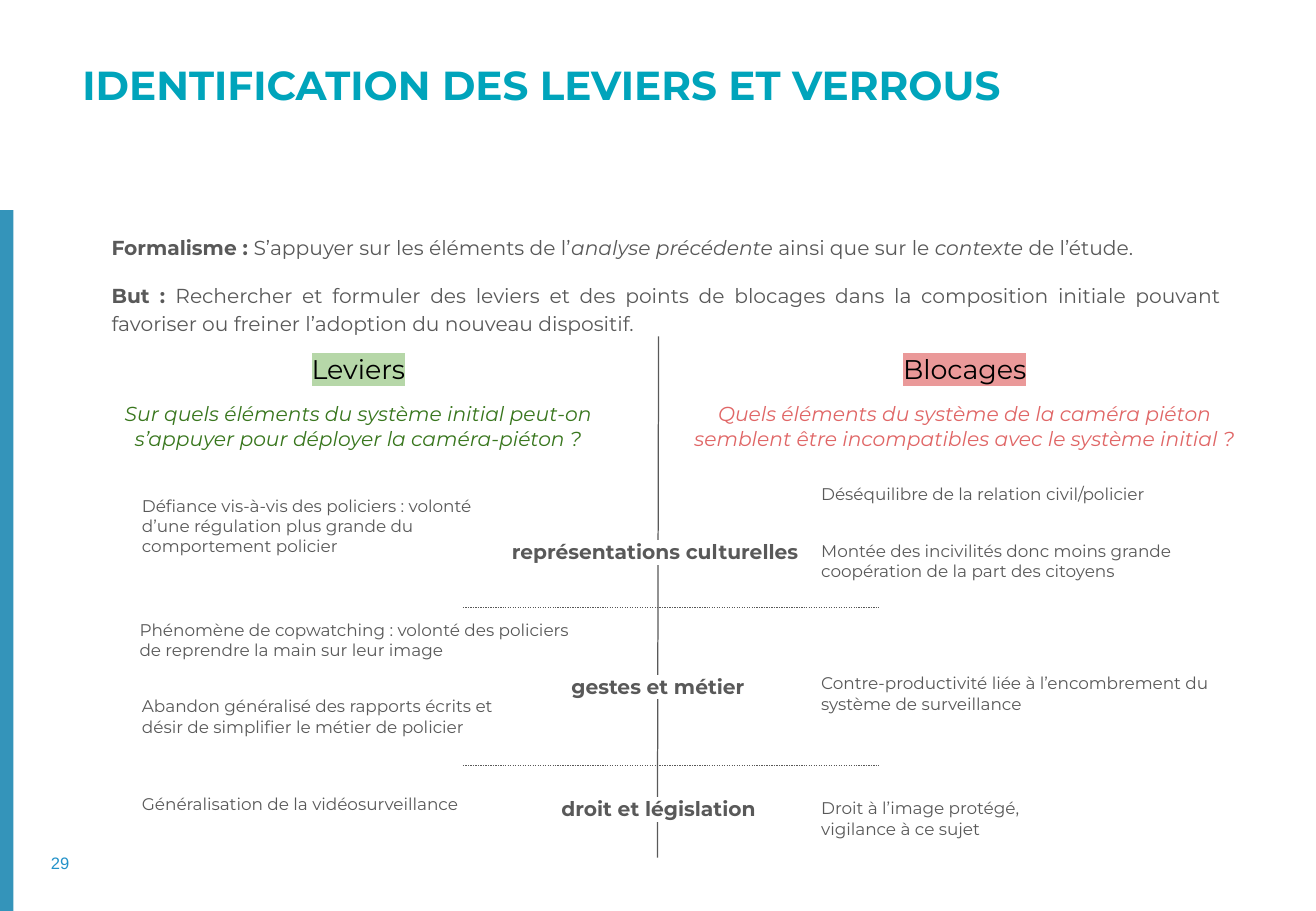
from lxml.etree import SubElement
from pptx import Presentation
from pptx.dml.color import RGBColor
from pptx.enum.dml import MSO_LINE
from pptx.enum.shapes import MSO_CONNECTOR, MSO_SHAPE
from pptx.enum.text import MSO_ANCHOR, PP_ALIGN
from pptx.oxml import parse_xml
from pptx.oxml.ns import nsdecls, qn
from pptx.util import Inches, Pt

GREY = "595959"
FONT = "Montserrat"


def color(value):
    """Return the colour for a hex string."""
    return RGBColor.from_string(value)


def add_box(slide, box, inset=0.1):
    """Add a wrapping text box and return its text frame."""
    tf = slide.shapes.add_textbox(*map(Inches, box)).text_frame
    tf.word_wrap = True
    tf.margin_left = tf.margin_right = Inches(0.1)
    tf.margin_top = tf.margin_bottom = Inches(inset)
    return tf


def add_run(p, text, size, fill=GREY, bold=False, italic=False, font=FONT, highlight=None):
    """Append a formatted run to a paragraph."""
    r = p.add_run()
    r.text = text
    r.font.size = Pt(size)
    r.font.name = font
    r.font.bold = bold
    r.font.italic = italic
    r.font.color.rgb = color(fill)
    if highlight:
        mark = parse_xml(f'<a:highlight {nsdecls("a")}><a:srgbClr val="{highlight}"/></a:highlight>')
        r.font._element.find(qn("a:latin")).addprevious(mark)


def add_line(slide, start, end, dash=None):
    """Draw a thin grey line between two points."""
    line = slide.shapes.add_connector(MSO_CONNECTOR.STRAIGHT, *map(Inches, start + end))
    line.line.color.rgb = color(GREY)
    line.line.width = Pt(0.75)
    if dash:
        line.line.dash_style = dash
    SubElement(line._element.spPr, qn("a:effectLst"))


def add_frame(slide, title, number):
    """Place the side bar, the title and the page number."""
    bar = slide.shapes.add_shape(
        MSO_SHAPE.RECTANGLE, 0, Inches(1.73), Inches(0.11), Inches(5.77))
    bar.shadow.inherit = False
    bar.fill.solid()
    bar.fill.fore_color.rgb = color("3494BA")
    bar.line.fill.background()
    tf = add_box(slide, (0.58, 0.49, 9.55, 0.52), 0)
    add_run(tf.paragraphs[0], title, 24, "00A4BB", bold=True)
    tf = add_box(slide, (0.14, 6.97, 0.43, 0.27), 0.05)
    tf.margin_right = 0
    tf.vertical_anchor = MSO_ANCHOR.MIDDLE
    tf.paragraphs[0].alignment = PP_ALIGN.RIGHT
    add_run(tf.paragraphs[0], number, 9.8, "2392C9", font="Arial")


def add_intro(slide, box, paragraphs):
    """Write justified paragraphs made of (text, style) pieces."""
    tf = add_box(slide, box, 0)
    for i, pieces in enumerate(paragraphs):
        p = tf.add_paragraph() if i else tf.paragraphs[0]
        p.alignment = PP_ALIGN.JUSTIFY
        p.line_spacing = 1.15
        if i:
            p.space_before = p.space_after = Pt(12)
        for text, style in pieces:
            add_run(p, text, 12, bold=style == "bold", italic=style == "italic")


def add_heading(slide, box, title, highlight, question, fill):
    """Write a highlighted column title above its question."""
    tf = add_box(slide, box)
    p = tf.paragraphs[0]
    p.alignment = PP_ALIGN.CENTER
    add_run(p, title, 16, "000000", highlight=highlight)
    p = tf.add_paragraph()
    p.alignment = PP_ALIGN.CENTER
    p.space_before = p.space_after = Pt(10)
    add_run(p, question, 12, fill, italic=True)


def add_theme(slide, box, text):
    """Write a bold theme label over the central axis."""
    p = add_box(slide, box).paragraphs[0]
    p.alignment = PP_ALIGN.CENTER
    add_run(p, text, 12, bold=True, highlight="FFFFFF")


def add_note(slide, box, text):
    """Write one lever or obstacle."""
    add_run(add_box(slide, box).paragraphs[0], text, 10)


def main():
    """Build the slide and save it."""
    prs = Presentation()
    prs.slide_width, prs.slide_height = Inches(10.83), Inches(7.5)
    slide = prs.slides.add_slide(prs.slide_layouts[6])
    add_frame(slide, "IDENTIFICATION DES LEVIERS ET VERROUS", "29")
    add_intro(slide, (0.82, 1.91, 9.33, 0.9), [
        [("Formalisme : ", "bold"), ("S’appuyer sur les éléments de l’", ""),
         ("analyse précédente", "italic"), (" ainsi que sur le ", ""),
         ("contexte ", "italic"), ("de l’étude.", "")],
        [("But : ", "bold"),
         ("Rechercher et formuler des leviers et des points de blocages dans la composition "
          "initiale pouvant favoriser ou freiner l’adoption du nouveau dispositif.", "")],
    ])
    add_heading(slide, (0.63, 2.8, 4.64, 1.05), "Leviers", "B6D7A8",
                "Sur quels éléments du système initial peut-on s’appuyer pour déployer "
                "la caméra-piéton ?", "38761D")
    add_heading(slide, (5.56, 2.8, 4.76, 1.02), "Blocages", "EA9999",
                "Quels éléments du système de la caméra piéton semblent être incompatibles "
                "avec le système initial ?", "E06666")
    add_line(slide, (5.42, 2.77), (5.41, 7.06))
    for y in (5, 6.3):
        add_line(slide, (3.81, y), (7.23, y), MSO_LINE.ROUND_DOT)

    themes = [
        ((3.69, 4.34, 3.45, 0.48), "représentations culturelles "),
        ((4.36, 5.45, 2.11, 0.4), "gestes et métier"),
        ((4.24, 6.46, 2.36, 0.4), "droit et législation"),
    ]
    for box, text in themes:
        add_theme(slide, box, text)

    notes = [
        ((1.07, 3.98, 3.23, 0.7), "Défiance vis-à-vis des policiers : volonté d’une régulation "
                                  "plus grande du comportement policier"),
        ((1.05, 5, 3.77, 0.54), "Phénomène de copwatching : volonté des policiers de reprendre "
                                "la main sur leur image"),
        ((1.07, 5.63, 3.35, 0.56), "Abandon généralisé des rapports écrits et désir de "
                                   "simplifier le métier de policier"),
        ((1.07, 6.45, 3.45, 0.37), "Généralisation de la vidéosurveillance"),
        ((6.66, 3.9, 3.23, 0.37), "Déséquilibre de la relation civil/policier"),
        ((6.66, 4.35, 3.35, 0.57), "Montée des incivilités donc moins grande coopération "
                                   "de la part des citoyens"),
        ((6.66, 5.44, 3.93, 0.54), "Contre-productivité liée à l’encombrement du système "
                                   "de surveillance"),
        ((6.66, 6.47, 2.36, 0.54), "Droit à l’image protégé, vigilance à ce sujet"),
    ]
    for box, text in notes:
        add_note(slide, box, text)
    prs.save("out.pptx")


if __name__ == "__main__":
    main()
